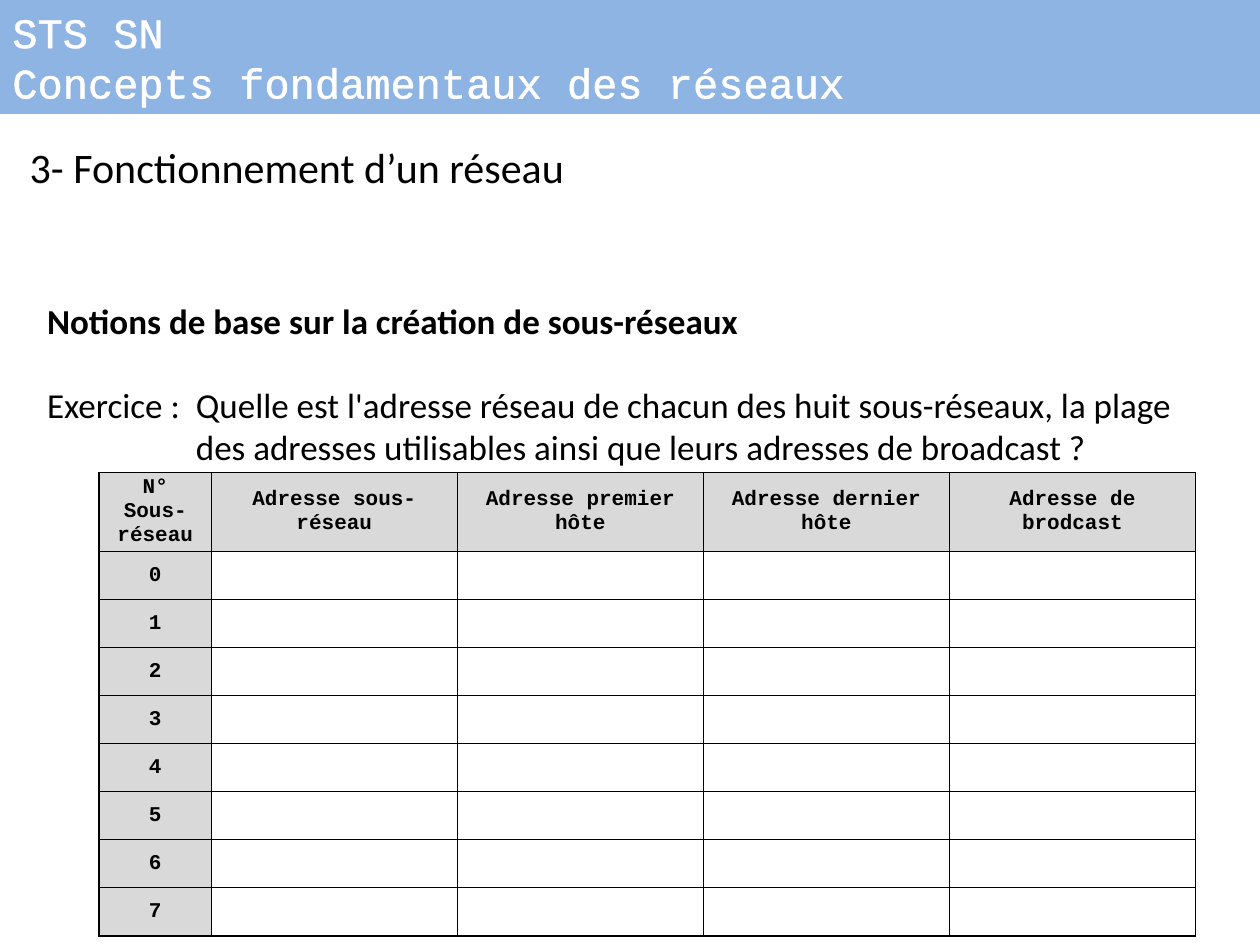
from lxml import etree
from pptx import Presentation
from pptx import util as u
from pptx.dml.color import RGBColor
from pptx.enum import shapes, text
from pptx.oxml import ns

BLUE = RGBColor(0x8E, 0xB4, 0xE3)
GREY = RGBColor(0xD9, 0xD9, 0xD9)
WHITE = RGBColor(0xFF, 0xFF, 0xFF)
BLACK = RGBColor(0, 0, 0)
MONO, SANS = "Courier New", "Calibri"
HEADS = ["N° Sous-réseau", "Adresse sous-réseau", "Adresse premier hôte",
         "Adresse dernier hôte", "Adresse de brodcast"]
SIDES = ("lnL", "lnR", "lnT", "lnB")


def style(par, face, size, tint, bold=False):
    """Format every run of a paragraph."""
    for run in par.runs:
        font = run.font
        font.name, font.size, font.bold = face, u.Pt(size), bold
        font.color.rgb = tint


def stroke(props, tag, width, tint, spot):
    """Insert a solid line element into text or cell properties."""
    line = etree.Element(ns.qn(f"a:{tag}"), w=str(int(u.Pt(width))))
    fill = etree.SubElement(line, ns.qn("a:solidFill"))
    etree.SubElement(fill, ns.qn("a:srgbClr"), val=str(tint))
    props.insert(spot, line)


def banner(slide, left, top, width, height):
    """Draw the course banner."""
    box = slide.shapes.add_shape(shapes.MSO_SHAPE.RECTANGLE, u.Cm(left), u.Cm(top),
                                 u.Cm(width), u.Cm(height))
    box.shadow.inherit = False
    box.fill.solid()
    box.fill.fore_color.rgb = BLUE
    box.line.fill.background()
    frame = box.text_frame
    frame.text = "STS SN\nConcepts fondamentaux des réseaux"
    frame.vertical_anchor = text.MSO_ANCHOR.TOP
    for par in frame.paragraphs:
        par.alignment = text.PP_ALIGN.LEFT
        style(par, MONO, 24, WHITE)
        for run in par.runs:
            stroke(run.font._element, "ln", 1.45, WHITE, 0)


def title(slide, left, top, width, height):
    """Write the chapter title."""
    box = slide.shapes.add_textbox(u.Cm(left), u.Cm(top), u.Cm(width), u.Cm(height))
    frame = box.text_frame
    frame.word_wrap = False
    frame.text = "3- Fonctionnement d’un réseau"
    style(frame.paragraphs[0], SANS, 24, BLACK)


def task(slide, left, top, width, height):
    """Write the topic and the exercise with a hanging indent."""
    box = slide.shapes.add_textbox(u.Cm(left), u.Cm(top), u.Cm(width), u.Cm(height))
    frame = box.text_frame
    frame.word_wrap = True
    frame.text = ("Notions de base sur la création de sous-réseaux\n"
                  "Exercice :\tQuelle est l'adresse réseau de chacun des huit "
                  "sous-réseaux, la plage des adresses utilisables ainsi que "
                  "leurs adresses de broadcast ?")
    topic, quest = frame.paragraphs
    style(topic, SANS, 20, BLACK, True)
    style(quest, SANS, 20, BLACK)
    quest.space_before = u.Pt(24)
    props = quest._p.get_or_add_pPr()
    props.set("marL", str(u.Cm(3)))
    props.set("indent", str(-u.Cm(3)))


def dress(cell, label, shade):
    """Fill, label and frame one table cell."""
    cell.margin_left = cell.margin_right = u.Cm(0.18)
    cell.margin_top = cell.margin_bottom = 0
    cell.vertical_anchor = text.MSO_ANCHOR.MIDDLE
    if shade:
        cell.fill.solid()
        cell.fill.fore_color.rgb = GREY
    else:
        cell.fill.background()
    if label:
        cell.text_frame.text = label
        par = cell.text_frame.paragraphs[0]
        par.alignment = text.PP_ALIGN.CENTER
        par.space_before = par.space_after = u.Pt(3)
        style(par, MONO, 12, BLACK, True)
    props = cell._tc.get_or_add_tcPr()
    for spot, side in enumerate(SIDES):
        stroke(props, side, 1, BLACK, spot)


def grid(slide, left, top, width, height, first=2.26, head=1.6, count=8):
    """Draw the answer table, one row for each subnet."""
    table = slide.shapes.add_table(count + 1, len(HEADS), u.Cm(left), u.Cm(top),
                                   u.Cm(width), u.Cm(height)).table
    table.horz_banding = False
    wide = (width - first) / (len(HEADS) - 1)
    tall = (height - head) / count
    for c, col in enumerate(table.columns):
        col.width = u.Cm(wide if c else first)
    for r, row in enumerate(table.rows):
        row.height = u.Cm(tall if r else head)
        labels = [str(r - 1)] + [""] * (len(HEADS) - 1) if r else HEADS
        for c, label in enumerate(labels):
            dress(table.cell(r, c), label, r == 0 or c == 0)


def main():
    """Build and save the slide."""
    deck = Presentation()
    deck.slide_width, deck.slide_height = u.Cm(25.4), u.Cm(19.05)
    slide = deck.slides.add_slide(deck.slide_layouts[6])
    banner(slide, 0, 0, 25.4, 2.3)
    title(slide, 0.35, 2.72, 11.4, 1.28)
    task(slide, 0.7, 5.92, 23.8, 7.1)
    grid(slide, 2, 9.52, 22.1, 9.35)
    deck.save("out.pptx")


if __name__ == "__main__":
    main()
